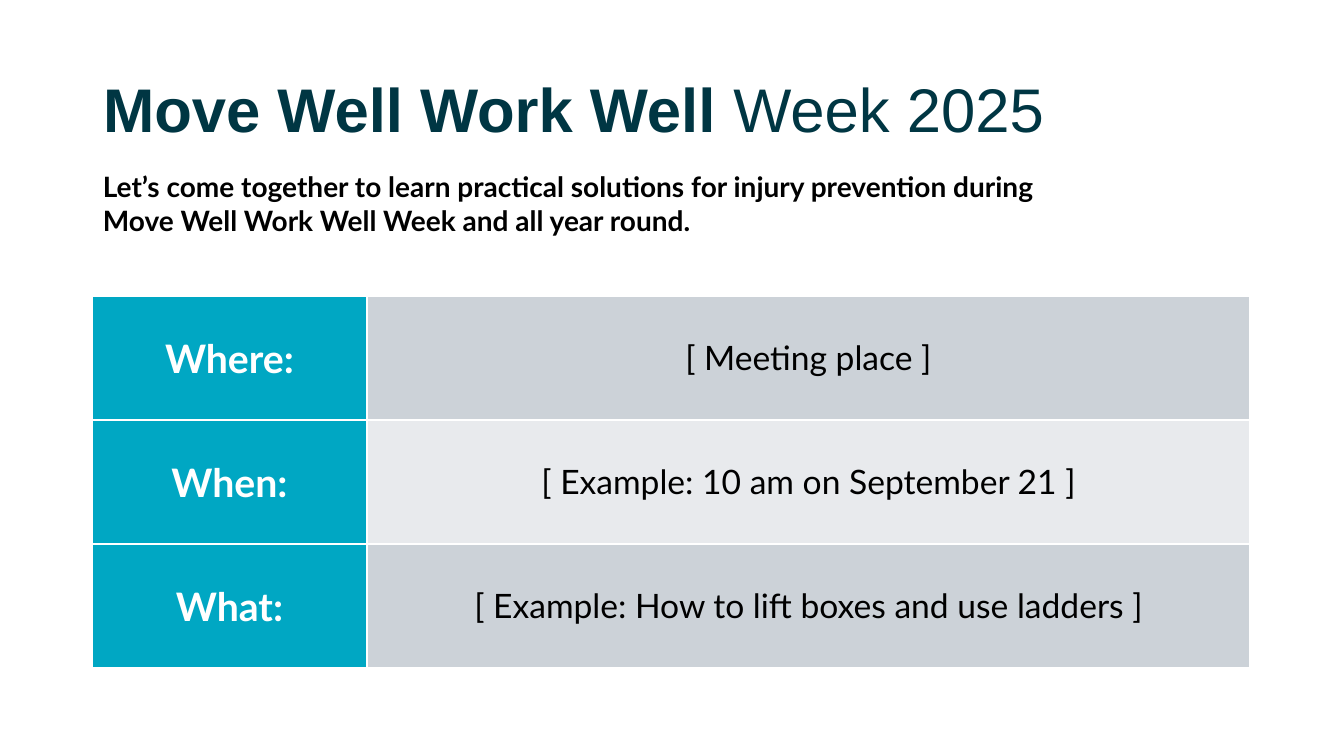
"""Build the Move Well Work Well Week announcement slide."""
from lxml import etree
from pptx import Presentation
from pptx import util as u
from pptx.dml.color import RGBColor
from pptx.enum import text
from pptx.oxml import ns

PX = 914400 / 100.8
NAVY = RGBColor(0x00, 0x36, 0x43)
TEAL = RGBColor(0x00, 0xA7, 0xC3)
GREY = RGBColor(0xCC, 0xD2, 0xD8)
PALE = RGBColor(0xE8, 0xEA, 0xED)
BLACK = RGBColor(0x00, 0x00, 0x00)
WHITE = RGBColor(0xFF, 0xFF, 0xFF)

DETAILS = [
    ("Where:", "[ Meeting place ]"),
    ("When:", "[ Example: 10 am on September 21 ]"),
    ("What:", "[ Example: How to lift boxes and use ladders ]"),
]
COLUMN_WIDTHS = (275, 883)
ROW_HEIGHT = 124


def px(length):
    """Turn pixels into EMU."""
    return u.Emu(round(length * PX))


def box(left, top, width, height):
    """Return a position and size in EMU."""
    return [px(length) for length in (left, top, width, height)]


def set_font(font, name, size, color, bold):
    """Set the typeface, size, colour and weight of a font."""
    font.name = name
    font.size = u.Pt(size)
    font.color.rgb = color
    font.bold = bold


def add_title(slide, bold_words, plain_words):
    """Place the title and write its bold and plain parts."""
    title = slide.shapes.title
    title.left, title.top, title.width, title.height = box(93, 40, 1159, 146)
    frame = title.text_frame
    frame.vertical_anchor = text.MSO_ANCHOR.MIDDLE
    frame.auto_size = text.MSO_AUTO_SIZE.NONE
    paragraph = frame.paragraphs[0]
    paragraph.alignment = text.PP_ALIGN.LEFT
    paragraph.line_spacing = 0.9
    for words, bold in ((bold_words, True), (plain_words, False)):
        run = paragraph.add_run()
        run.text = words
        set_font(run.font, "Arial", 44, NAVY, bold)


def add_intro(slide, words):
    """Add the wrapped introduction under the title."""
    frame = slide.shapes.add_textbox(*box(93, 165, 966, 78)).text_frame
    frame.word_wrap = True
    frame.auto_size = text.MSO_AUTO_SIZE.SHAPE_TO_FIT_TEXT
    paragraph = frame.paragraphs[0]
    paragraph.text = words
    set_font(paragraph.font, "Lato", 20, BLACK, True)


def add_borders(cell):
    """Draw a thin white line on every side of a cell."""
    properties = cell._tc.get_or_add_tcPr()
    for side in ("lnL", "lnR", "lnT", "lnB"):
        line = etree.SubElement(properties, ns.qn(f"a:{side}"), w=str(u.Pt(1)))
        fill = etree.SubElement(line, ns.qn("a:solidFill"))
        etree.SubElement(fill, ns.qn("a:srgbClr"), val=str(WHITE))


def fill_cell(cell, words, size, color, bold, background):
    """Write centred words in a filled, bordered cell."""
    add_borders(cell)
    cell.fill.solid()
    cell.fill.fore_color.rgb = background
    cell.vertical_anchor = text.MSO_ANCHOR.MIDDLE
    paragraph = cell.text_frame.paragraphs[0]
    paragraph.text = words
    paragraph.alignment = text.PP_ALIGN.CENTER
    set_font(paragraph.font, "Lato", size, color, bold)


def add_details(slide):
    """Add the table of place, time and topic."""
    area = box(92, 296, sum(COLUMN_WIDTHS), ROW_HEIGHT * len(DETAILS))
    table = slide.shapes.add_table(len(DETAILS), len(COLUMN_WIDTHS), *area).table
    table.first_row = False
    table.first_col = True
    table.horz_banding = False
    for column, width in zip(table.columns, COLUMN_WIDTHS):
        column.width = px(width)
    for index, (label, detail) in enumerate(DETAILS):
        table.rows[index].height = px(ROW_HEIGHT)
        band = PALE if index % 2 else GREY
        fill_cell(table.cell(index, 0), label, 28, WHITE, True, TEAL)
        fill_cell(table.cell(index, 1), detail, 24, BLACK, False, band)


def main():
    """Build and save the presentation."""
    presentation = Presentation()
    presentation.slide_width, presentation.slide_height = px(1344), px(756)
    slide = presentation.slides.add_slide(presentation.slide_layouts[5])
    add_title(slide, "Move Well Work Well ", "Week 2025")
    add_details(slide)
    add_intro(
        slide,
        "Let’s come together to learn practical solutions for injury prevention "
        "during Move Well Work Well Week and all year round.",
    )
    presentation.save("out.pptx")


if __name__ == "__main__":
    main()
